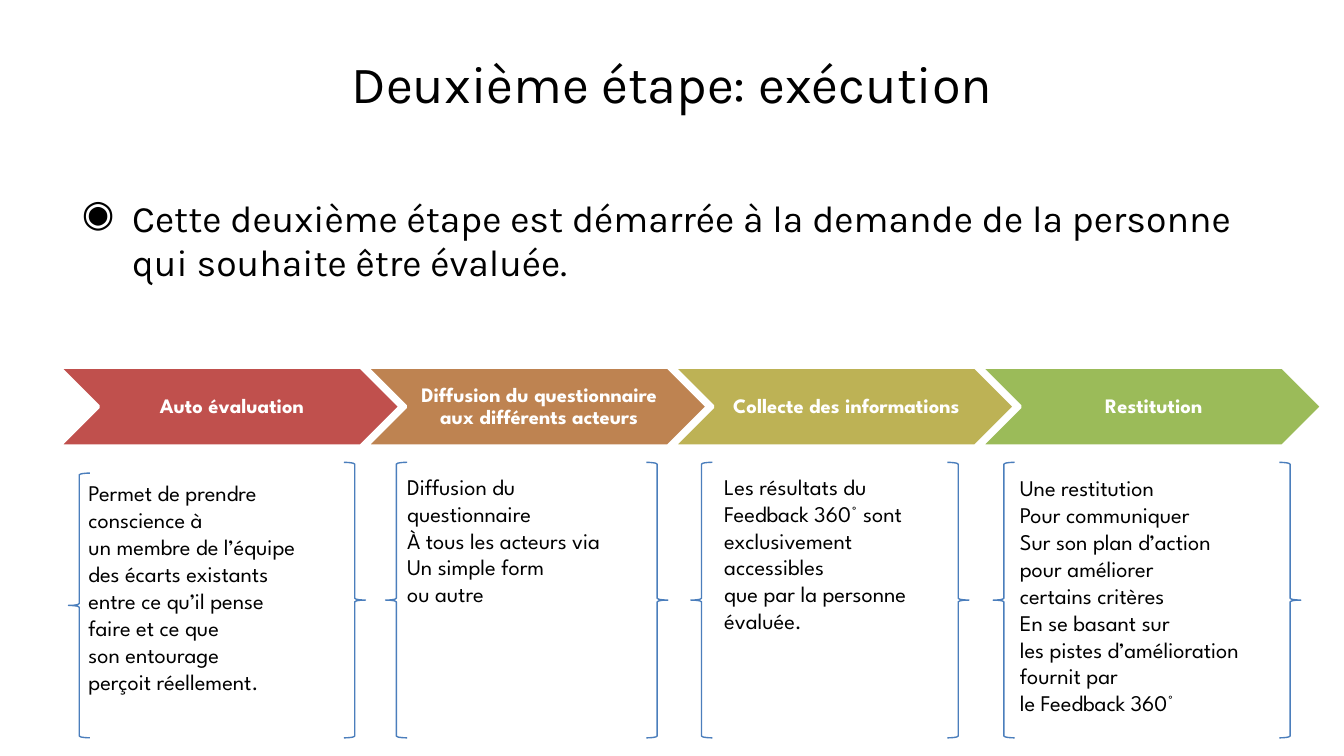
from dataclasses import dataclass

from lxml import etree
from pptx import Presentation
from pptx.dml.color import RGBColor
from pptx.enum.shapes import MSO_SHAPE
from pptx.enum.text import MSO_ANCHOR, PP_ALIGN
from pptx.oxml.ns import qn
from pptx.util import Pt

CHEVRON = MSO_SHAPE.CHEVRON
LEFT_BRACE, RIGHT_BRACE = MSO_SHAPE.LEFT_BRACE, MSO_SHAPE.RIGHT_BRACE
MIDDLE, CENTER, LEFT = MSO_ANCHOR.MIDDLE, PP_ALIGN.CENTER, PP_ALIGN.LEFT


@dataclass(frozen=True)
class Theme:
    ink: str = "000000"
    paper: str = "FFFFFF"
    brace: str = "4B7EBC"
    head: str = "Karla"
    body: str = "League Spartan"
    title: float = 28
    lead: float = 20
    note: float = 12
    step: float = 11


THEME = Theme()

STEPS = [
    ("Auto évaluation", "C0504D"),
    ("Diffusion du questionnaire aux différents acteurs", "BE8351"),
    ("Collecte des informations", "BDB255"),
    ("Restitution", "9BBB59"),
]

# Each note: box, text box inset (x, y), text size (w, h), left brace drop, lines
NOTES = [
    ((36.7, 247.7, 159.1, 147.6), (3.6, 5.7), (157.7, 145.4), 5.8,
     ["Permet de prendre", "conscience à", "un membre de l’équipe",
      "des écarts existants", "entre ce qu’il pense", "faire et ce que",
      "son entourage", "perçoit réellement."]),
    ((206.6, 247.7, 151.2, 147.6), (4.4, 2.1), (137.5, 101.5), 0,
     ["Diffusion du", "questionnaire", "À tous les acteurs via",
      "Un simple form", "ou autre"]),
    ((370.1, 247.7, 149, 147.6), (10.8, 2.1), (137.5, 94.3), 0,
     ["Les résultats du", "Feedback 360° sont", "exclusivement",
      "accessibles", "que par la personne", "évaluée."]),
    ((532.1, 247.7, 164.8, 147.6), (7.2, 2.9), (158.4, 138.2), 0,
     ["Une restitution", "Pour communiquer", "Sur son plan d’action",
      "pour améliorer", "certains critères", "En se basant sur",
      "les pistes d’amélioration", "fournit par", "le Feedback 360°"]),
]


def color(code):
    return RGBColor.from_string(code)


def add_text(slide, box, lines, size, face, ink=THEME.ink, bold=False, align=LEFT):
    """Add a wrapped text box with one paragraph per line; return its frame."""
    frame = slide.shapes.add_textbox(*map(Pt, box)).text_frame
    frame.word_wrap = True
    for i, line in enumerate(lines):
        para = frame.paragraphs[0] if i == 0 else frame.add_paragraph()
        para.alignment = align
        run = para.add_run()
        run.text = line
        run.font.size = Pt(size)
        run.font.name = face
        run.font.bold = bold
        run.font.color.rgb = color(ink)
    return frame


def add_form(slide, kind, box, line, width, fill=None):
    form = slide.shapes.add_shape(kind, *map(Pt, box))
    form.shadow.inherit = False
    if fill:
        form.fill.solid()
        form.fill.fore_color.rgb = color(fill)
    else:
        form.fill.background()
    form.line.color.rgb = color(line)
    form.line.width = Pt(width)


def add_title(slide, box):
    add_text(slide, box, ["Deuxième étape: exécution"],
             THEME.title, THEME.head, align=CENTER)


def add_lead(slide, box):
    frame = add_text(
        slide, box,
        ["Cette deuxième étape est démarrée à la demande de la personne "
         "qui souhaite être évaluée."],
        THEME.lead, THEME.head)
    props = frame.paragraphs[0]._p.get_or_add_pPr()
    props.set("marL", str(Pt(27)))
    props.set("indent", str(-Pt(27)))
    etree.SubElement(props, qn("a:buChar")).set("char", "◉")


def add_steps(slide, box):
    """Spread overlapping chevrons over the box, each with a centred label."""
    left, top, width, height = box
    wide = 183
    pitch = (width - wide) / (len(STEPS) - 1)
    for i, (label, fill) in enumerate(STEPS):
        x = left + i * pitch
        add_form(slide, CHEVRON, (x, top, wide, height), THEME.paper, 2, fill)
        frame = add_text(slide, (x + height / 2, top, 141, height), [label],
                         THEME.step, THEME.body, THEME.paper, True, CENTER)
        frame.vertical_anchor = MIDDLE
        frame.margin_left = Pt(3.6)
        frame.margin_right = frame.margin_top = frame.margin_bottom = Pt(1.4)
        frame.paragraphs[0].line_spacing = 0.9


def add_note(slide, box, inset, size, drop, lines):
    """Frame the lines with a pair of braces at the sides of the box."""
    left, top, width, height = box
    thick = 11.5
    for kind, x, down in ((LEFT_BRACE, left, drop),
                          (RIGHT_BRACE, left + width - thick, 0)):
        add_form(slide, kind, (x, top + down, thick, height - down),
                 THEME.brace, 0.75)
    add_text(slide, (left + inset[0], top + inset[1], *size), lines,
             THEME.note, THEME.body)


def main():
    deck = Presentation()
    deck.slide_width, deck.slide_height = Pt(720), Pt(405)
    slide = deck.slides.add_slide(deck.slide_layouts[6])
    add_lead(slide, (36.7, 100.8, 646.6, 267.2))
    add_title(slide, (0, 23.8, 720, 27.4))
    add_steps(slide, (31.5, 196.6, 676.8, 42.5))
    for note in NOTES:
        add_note(slide, *note)
    deck.save("out.pptx")


if __name__ == "__main__":
    main()
